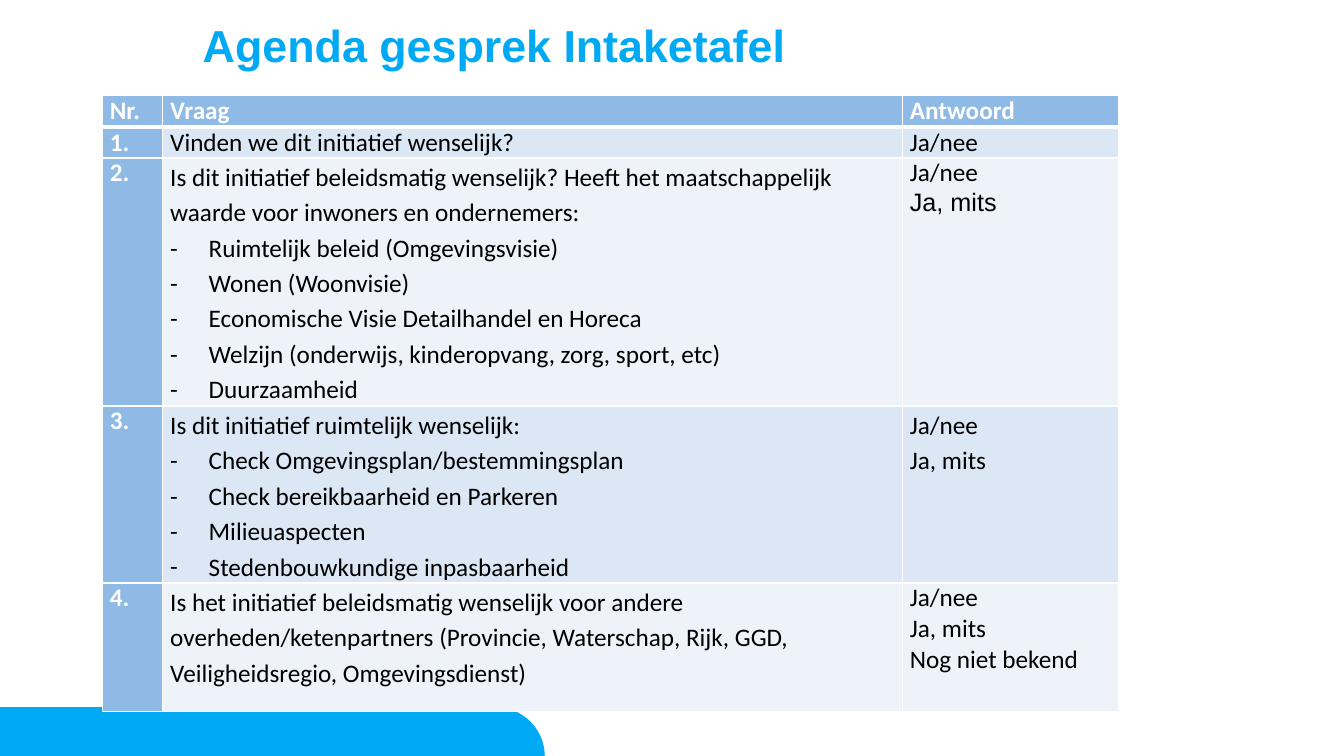
import math
from dataclasses import dataclass

import pptx
import pptx.oxml
import pptx.oxml.ns
import pptx.util
from pptx.dml.color import RGBColor
from pptx.enum.text import MSO_ANCHOR

Cm = pptx.util.Cm
Pt = pptx.util.Pt


@dataclass(frozen=True)
class Theme:
    accent: str = "00A9F3"
    header: str = "8EBAE5"
    bands: tuple = ("DBE7F5", "EEF3FA")
    light: str = "FFFFFF"
    dark: str = "000000"
    title_font: str = "Arial"
    table_font: str = "Calibri"
    title_size: int = 32
    table_size: int = 18
    border: int = 1
    header_border: int = 3


@dataclass(frozen=True)
class Box:
    """A region in centimetres."""
    left: float
    top: float
    width: float
    height: float


THEME = Theme()
BULLET = "- "
LOOSE = 1.15
COLUMN_WIDTHS = (1.52, 18.64, 5.44)
ROW_HEIGHTS = (0.8, 0.78, 6.25, 4.46, 3.23)
HEADINGS = ("Nr.", "Vraag", "Antwoord")

# Each row: question lines, their spacing, answers, their spacing
QUESTIONS = (
    (("Vinden we dit initiatief wenselijk?",), 1, ("Ja/nee",), 1),
    (("Is dit initiatief beleidsmatig wenselijk? Heeft het maatschappelijk "
      "waarde voor inwoners en ondernemers:",
      "- Ruimtelijk beleid (Omgevingsvisie)",
      "- Wonen (Woonvisie)",
      "- Economische Visie Detailhandel en Horeca",
      "- Welzijn (onderwijs, kinderopvang, zorg, sport, etc)",
      "- Duurzaamheid"), LOOSE, ("Ja/nee", "Ja, mits"), 1),
    (("Is dit initiatief ruimtelijk wenselijk:",
      "- Check Omgevingsplan/bestemmingsplan",
      "- Check bereikbaarheid en Parkeren",
      "- Milieuaspecten",
      "- Stedenbouwkundige inpasbaarheid"), LOOSE, ("Ja/nee", "Ja, mits"), LOOSE),
    (("Is het initiatief beleidsmatig wenselijk voor andere "
      "overheden/ketenpartners (Provincie, Waterschap, Rijk, GGD, "
      "Veiligheidsregio, Omgevingsdienst)",), LOOSE,
     ("Ja/nee", "Ja, mits", "Nog niet bekend"), 1),
)


def style_font(font, name, size, color, bold):
    font.name = name
    font.size = Pt(size)
    font.color.rgb = RGBColor.from_string(color)
    font.bold = bold


def add_footer_tab(slide, box):
    """Draw a bar whose top right corner is a quarter circle."""
    radius = box.height
    right, bottom = box.left + box.width, box.top + box.height
    angles = [math.radians(90 - 5 * step) for step in range(19)]
    arc = [(right - radius + radius * math.cos(angle),
            bottom - radius * math.sin(angle)) for angle in angles]
    points = [(Cm(x), Cm(y)) for x, y in [(box.left, box.top), *arc]]
    builder = slide.shapes.build_freeform(Cm(box.left), Cm(bottom))
    builder.add_line_segments(points, close=True)
    shape = builder.convert_to_shape()
    shape.shadow.inherit = False
    shape.fill.solid()
    shape.fill.fore_color.rgb = RGBColor.from_string(THEME.accent)
    shape.line.fill.background()


def add_title(slide, box, text):
    shape = slide.shapes.add_textbox(
        Cm(box.left), Cm(box.top), Cm(box.width), Cm(box.height))
    frame = shape.text_frame
    frame.word_wrap = True
    frame.vertical_anchor = MSO_ANCHOR.TOP
    frame.margin_left = frame.margin_right = 0
    frame.margin_top = frame.margin_bottom = 0
    paragraph = frame.paragraphs[0]
    paragraph.text = text
    paragraph.line_spacing = 0.9
    style_font(paragraph.font, THEME.title_font, THEME.title_size, THEME.accent, True)


def add_dash(paragraph):
    properties = paragraph._p.get_or_add_pPr()
    properties.set("marL", str(Cm(0.97)))
    properties.set("indent", str(-Cm(0.97)))
    namespace = pptx.oxml.ns.nsdecls("a")
    for element in (f'buFont {namespace} typeface="{THEME.table_font}"',
                    f'buChar {namespace} char="-"'):
        properties.append(pptx.oxml.parse_xml(f"<a:{element}/>"))


def set_borders(cell, bottom_width, top_width):
    widths = {"L": THEME.border, "R": THEME.border, "T": top_width, "B": bottom_width}
    properties = cell._tc.get_or_add_tcPr()
    for side, width in widths.items():
        properties.append(pptx.oxml.parse_xml(
            f'<a:ln{side} {pptx.oxml.ns.nsdecls("a")} w="{Pt(width)}">'
            f'<a:solidFill><a:srgbClr val="{THEME.light}"/></a:solidFill>'
            f'</a:ln{side}>'))


def fill_cell(cell, lines, spacing, fill, color, bold):
    cell.margin_left = cell.margin_right = Cm(0.19)
    cell.margin_top = cell.margin_bottom = 0
    cell.fill.solid()
    cell.fill.fore_color.rgb = RGBColor.from_string(fill)
    frame = cell.text_frame
    for index, line in enumerate(lines):
        paragraph = frame.add_paragraph() if index else frame.paragraphs[0]
        paragraph.text = line.removeprefix(BULLET)
        if line.startswith(BULLET):
            add_dash(paragraph)
        paragraph.line_spacing = float(spacing)
        style_font(paragraph.font, THEME.table_font, THEME.table_size, color, bold)


def add_question_table(slide, box):
    table = slide.shapes.add_table(
        len(ROW_HEIGHTS), len(COLUMN_WIDTHS),
        Cm(box.left), Cm(box.top), Cm(box.width), Cm(box.height)).table
    table.horz_banding = False
    for column, width in zip(table.columns, COLUMN_WIDTHS):
        column.width = Cm(width)
    for index, (row, height) in enumerate(zip(table.rows, ROW_HEIGHTS)):
        row.height = Cm(height)
        for cell in row.cells:
            set_borders(cell,
                        THEME.header_border if index == 0 else THEME.border,
                        THEME.header_border if index == 1 else THEME.border)

    for column, heading in enumerate(HEADINGS):
        fill_cell(table.cell(0, column), [heading], 1, THEME.header, THEME.light, True)
    for number, (question, spacing, answers, answer_spacing) in enumerate(QUESTIONS, 1):
        band = THEME.bands[(number - 1) % 2]
        fill_cell(table.cell(number, 0), [f"{number}."], 1,
                  THEME.header, THEME.light, True)
        fill_cell(table.cell(number, 1), question, spacing, band, THEME.dark, False)
        fill_cell(table.cell(number, 2), answers, answer_spacing, band, THEME.dark, False)
    # The second answer to question 2 is set in the title font
    table.cell(2, 2).text_frame.paragraphs[1].font.name = THEME.title_font


def main():
    presentation = pptx.Presentation()
    presentation.slide_width = Cm(33.87)
    presentation.slide_height = Cm(19.05)
    slide = presentation.slides.add_slide(presentation.slide_layouts[6])
    for left in (-0.03, 6.25):
        add_footer_tab(slide, Box(left, 17.82, 7.48, 1.24))
    add_title(slide, Box(5.11, 0.61, 17.68, 3.48), "Agenda gesprek Intaketafel")
    add_question_table(
        slide, Box(2.58, 2.4, sum(COLUMN_WIDTHS), sum(ROW_HEIGHTS)))
    presentation.save("out.pptx")


if __name__ == "__main__":
    main()
